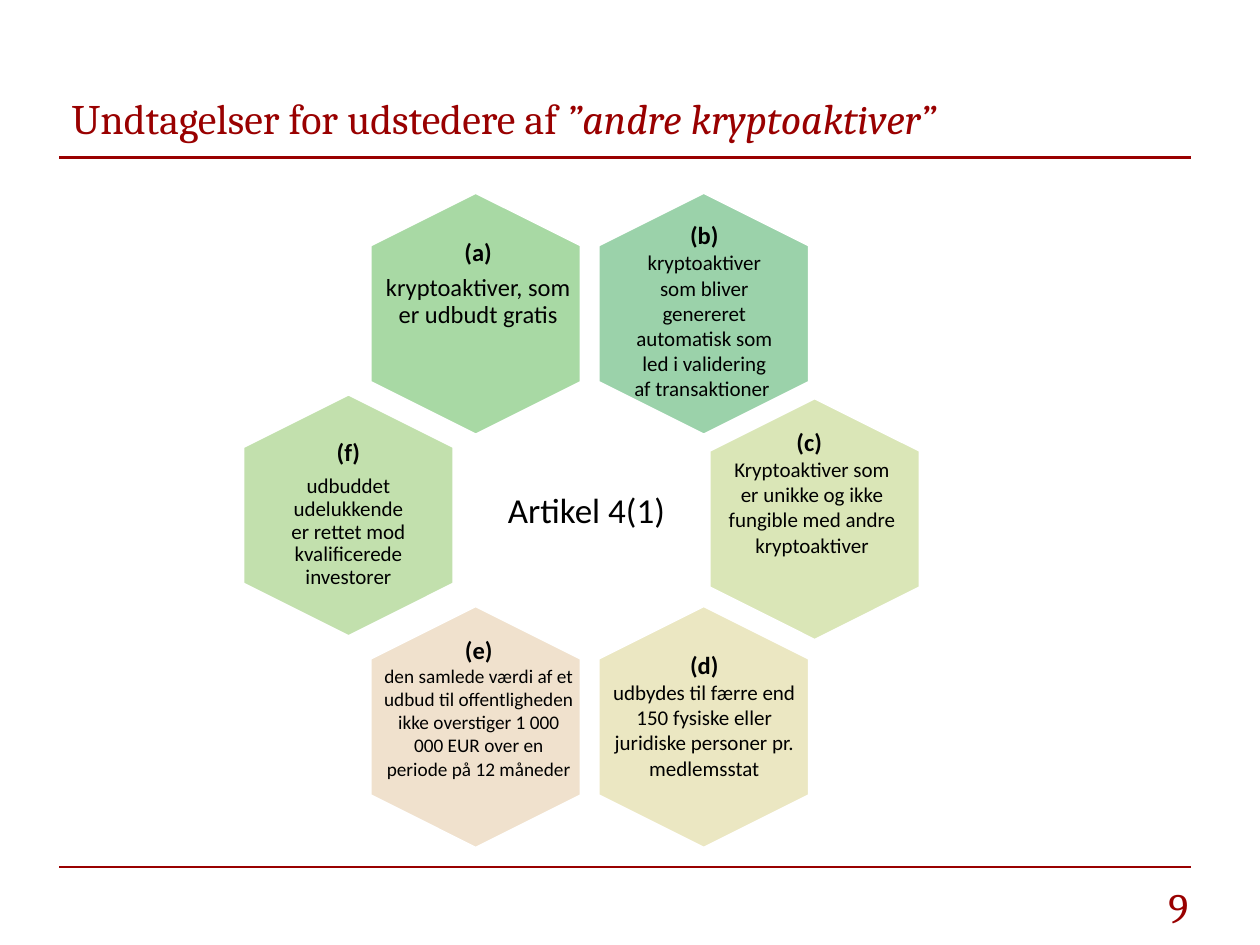
from pptx import Presentation
from pptx.dml.color import RGBColor
from pptx.enum.shapes import MSO_CONNECTOR, MSO_SHAPE
from pptx.enum.text import MSO_ANCHOR as ANCHOR, PP_ALIGN as ALIGN
from pptx.oxml.ns import qn
from pptx.util import Inches, Pt
from lxml import etree

RED = RGBColor(0x99, 0x00, 0x00)
BLACK = RGBColor(0, 0, 0)
WHITE = RGBColor(255, 255, 255)

TITLE = [("Undtagelser for udstedere af ", {}),
         ("”andre kryptoaktiver”", {"italic": True})]
CENTRE = "Artikel 4(1)"
PAGE = "9"

HEX_W, HEX_H = 1.93, 1.68
RULES = [1.25, 6.88]
LEFT, RIGHT = 0.47, 9.45

# Roomy boxes have tight lines, a gap after the heading and middled text.
ROOMY = {"anchor": ANCHOR.MIDDLE, "inset": 0.06, "lines": 0.9, "after": 5}

# hexagon corner, colour, text box, heading, text, text size, box format
CASES = [
    ((4.62, 1.65), RGBColor(0x9B, 0xD2, 0xAA), (4.92, 1.7, 1.34, 1.55), "(b)",
     "kryptoaktiver som bliver genereret automatisk som led i validering "
     "af transaktioner ", 12, {}),
    ((2.81, 1.65), RGBColor(0xA8, 0xD9, 0xA4), (2.95, 1.68, 1.69, 1.16), "(a)",
     "kryptoaktiver, som er udbudt gratis", 14, ROOMY),
    ((1.8, 3.25), RGBColor(0xC2, 0xE0, 0xAD), (2.19, 3.42, 1.15, 1.33), "(f)",
     "udbuddet udelukkende er rettet mod kvalificerede investorer", 12, ROOMY),
    ((5.5, 3.28), RGBColor(0xDA, 0xE6, 0xB7), (5.66, 3.34, 1.57, 1.14), "(c) ",
     "Kryptoaktiver som er unikke og ikke fungible med andre kryptoaktiver",
     12, {}),
    ((4.62, 4.93), RGBColor(0xEB, 0xE7, 0xC2), (4.76, 5.11, 1.66, 1.45), "(d)",
     "udbydes til færre end 150 fysiske eller juridiske personer pr. "
     "medlemsstat", 12, {}),
    ((2.81, 4.93), RGBColor(0xF0, 0xE1, 0xCD), (2.95, 4.99, 1.7, 1.87), "(e)",
     "den samlede værdi af et udbud til offentligheden ikke overstiger "
     "1 000 000 EUR over en periode på 12 måneder", 11, {}),
]


def add_text(slide, box, paras, size=12, font="Calibri", color=BLACK,
             align=ALIGN.CENTER, anchor=ANCHOR.TOP, inset=None, lines=None,
             after=0):
    """Add a text box; each paragraph is a list of (text, font changes)."""
    frame = slide.shapes.add_textbox(*map(Inches, box)).text_frame
    frame.word_wrap = True
    frame.vertical_anchor = anchor
    if inset is not None:
        frame.margin_left = frame.margin_right = Inches(inset)
        frame.margin_top = frame.margin_bottom = Inches(inset)
    for i, runs in enumerate(paras):
        para = frame.add_paragraph() if i else frame.paragraphs[0]
        para.alignment = align
        para.space_after = Pt(after)
        if lines:
            para.line_spacing = lines
        for text, style in runs:
            run = para.add_run()
            run.text = text
            face = run.font
            face.name = font
            face.color.rgb = color
            face.size = Pt(style.get("size", size))
            face.bold = style.get("bold", False)
            face.italic = style.get("italic", False)


def add_rule(slide, y):
    rule = slide.shapes.add_connector(
        MSO_CONNECTOR.STRAIGHT, Inches(LEFT), Inches(y), Inches(RIGHT), Inches(y))
    rule.line.color.rgb = RED
    rule.line.width = Pt(1.25)
    etree.SubElement(rule._element.spPr, qn("a:effectLst"))


def add_hex(slide, corner, color):
    cell = slide.shapes.add_shape(
        MSO_SHAPE.HEXAGON, *map(Inches, (*corner, HEX_W, HEX_H)))
    cell.rotation = 90
    cell.adjustments[0] = 0.25
    cell.shadow.inherit = False
    cell.fill.solid()
    cell.fill.fore_color.rgb = color
    cell.line.color.rgb = WHITE
    cell.line.width = Pt(2)


def main():
    deck = Presentation()
    deck.slide_width, deck.slide_height = Inches(10), Inches(7.5)
    slide = deck.slides.add_slide(deck.slide_layouts[6])

    for y in RULES:
        add_rule(slide, y)
    heading = {"size": 24, "font": "Cambria", "color": RED}
    add_text(slide, (LEFT, 0.59, 9, 0.69), [TITLE], align=ALIGN.LEFT,
             anchor=ANCHOR.MIDDLE, **heading)
    add_text(slide, (LEFT, 6.95, 9.06, 0.47), [[(PAGE, {})]],
             align=ALIGN.RIGHT, **heading)

    for corner, color, *_ in CASES:
        add_hex(slide, corner, color)
    for _, _, box, mark, text, size, style in CASES:
        add_text(slide, box, [[(mark, {"size": 14, "bold": True})], [(text, {})]],
                 size=size, **style)
    add_text(slide, (3.67, 3.83, 1.97, 0.44), [[(CENTRE, {})]], size=20)

    deck.save("out.pptx")


if __name__ == "__main__":
    main()
